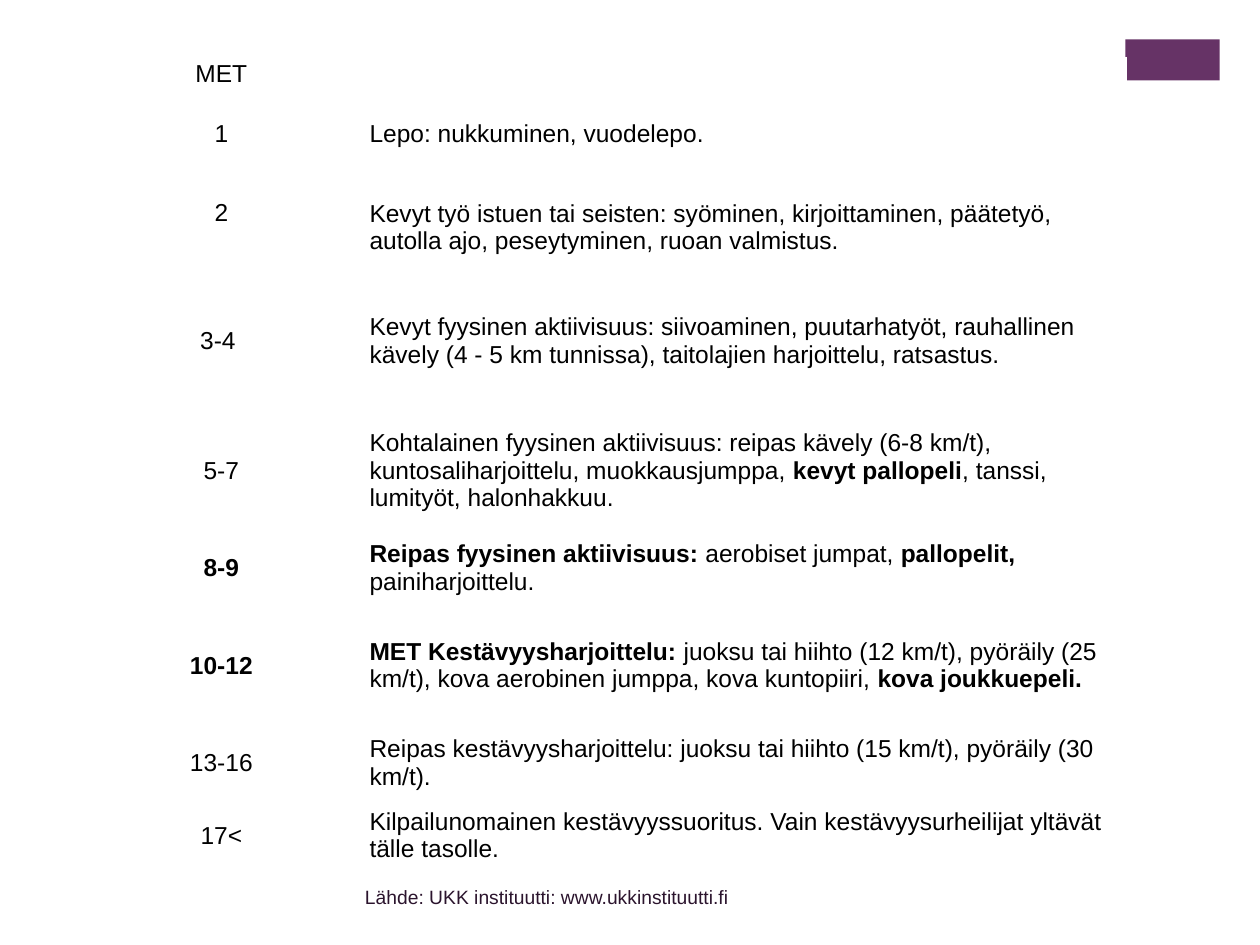
from lxml.etree import SubElement
from pptx import Presentation
from pptx.dml.color import RGBColor
from pptx.enum.shapes import MSO_SHAPE as Shape
from pptx.enum.text import MSO_ANCHOR as Anchor, PP_ALIGN as Align
from pptx.oxml.ns import qn
from pptx.util import Pt

COLORS = {"accent": "663366", "text": "000000", "source": "2B142D"}
BODY_SIZE = 14
INSET = 0.7
COLUMN_WIDTHS = [168, 433]
# Row height, MET level, description; ** switches bold on and off.
MET_ROWS = [
    (18, "MET", ""),
    (50.5, "1", "Lepo: nukkuminen, vuodelepo."),
    (56, "2", "Kevyt työ istuen tai seisten: syöminen, kirjoittaminen, päätetyö, "
              "autolla ajo, peseytyminen, ruoan valmistus."),
    (74, "3-4 ", "Kevyt fyysinen aktiivisuus: siivoaminen, puutarhatyöt, rauhallinen "
                 "kävely (4 - 5 km tunnissa), taitolajien harjoittelu, ratsastus."),
    (74, "5-7", "Kohtalainen fyysinen aktiivisuus: reipas kävely (6-8 km/t), "
                "kuntosaliharjoittelu, muokkausjumppa, **kevyt pallopeli**, tanssi, "
                "lumityöt, halonhakkuu."),
    (37.5, "**8-9**", "**Reipas fyysinen aktiivisuus: **aerobiset jumpat, "
                      "**pallopelit, **painiharjoittelu."),
    (74, "**10-12**", "**MET Kestävyysharjoittelu: **juoksu tai hiihto (12 km/t), "
                      "pyöräily (25 km/t), kova aerobinen jumppa, kova kuntopiiri, "
                      "**kova joukkuepeli.**"),
    (37.5, "13-16", "Reipas kestävyysharjoittelu: juoksu tai hiihto (15 km/t), "
                    "pyöräily (30 km/t)."),
    (45.5, "17<", "Kilpailunomainen kestävyyssuoritus. Vain kestävyysurheilijat "
                  "yltävät tälle tasolle."),
]
RAISED_LEVEL = "2"  # this label sits half a line above the middle of its row


def set_all(target, values):
    for name, value in values.items():
        setattr(target, name, value)


class SlideBuilder:
    def __init__(self, slide, font="Arial"):
        self.slide = slide
        self.font = font

    def fill_para(self, para, text, size, color):
        """Fill a paragraph, with ** marking where bold starts and ends."""
        for index, part in enumerate(text.split("**")):
            if part:
                span = para.add_run()
                span.text = part
                set_all(span.font, {"name": self.font, "size": Pt(size),
                                    "bold": index % 2 == 1})
                span.font.color.rgb = RGBColor.from_string(COLORS[color])
        if not text:
            # An empty cell would otherwise be as tall as 18 point text
            SubElement(para._p, qn("a:endParaRPr"), sz=str(size * 100))

    def block(self, left, top, width, height, color):
        shape = self.slide.shapes.add_shape(
            Shape.RECTANGLE, Pt(left), Pt(top), Pt(width), Pt(height))
        shape.shadow.inherit = False
        shape.fill.solid()
        shape.fill.fore_color.rgb = RGBColor.from_string(COLORS[color])
        shape.line.fill.background()

    def text(self, left, top, width, height, text, size, color):
        box = self.slide.shapes.add_textbox(Pt(left), Pt(top), Pt(width), Pt(height))
        box.text_frame.word_wrap = True
        self.fill_para(box.text_frame.paragraphs[0], text, size, color)

    def cell(self, cell, text, align):
        cell.fill.background()
        set_all(cell, {"vertical_anchor": Anchor.MIDDLE,
                       "margin_left": Pt(INSET), "margin_right": Pt(INSET),
                       "margin_top": Pt(INSET), "margin_bottom": Pt(INSET)})
        para = cell.text_frame.paragraphs[0]
        para.alignment = align
        self.fill_para(para, text, BODY_SIZE, "text")

    def table(self, left, top, widths, rows):
        height = sum(row[0] for row in rows)
        table = self.slide.shapes.add_table(
            len(rows), len(widths), Pt(left), Pt(top), Pt(sum(widths)), Pt(height)).table
        set_all(table, {"first_row": False, "horz_banding": False})
        for column, width in zip(table.columns, widths):
            column.width = Pt(width)
        for index, (row_height, level, description) in enumerate(rows):
            table.rows[index].height = Pt(row_height)
            self.cell(table.cell(index, 0), level, Align.CENTER)
            self.cell(table.cell(index, 1), description, Align.LEFT)
            if level == RAISED_LEVEL:
                table.cell(index, 0).margin_bottom = Pt(INSET + BODY_SIZE + 2)


def main():
    deck = Presentation()
    set_all(deck, {"slide_width": Pt(720), "slide_height": Pt(540)})
    page = SlideBuilder(deck.slides.add_slide(deck.slide_layouts[6]))
    page.block(643, 22.5, 54, 23.5, "accent")
    page.table(42.5, 33, COLUMN_WIDTHS, MET_ROWS)
    page.text(201.5, 502.5, 307, 29, "Lähde: UKK instituutti: www.ukkinstituutti.fi",
              11, "source")
    deck.save("out.pptx")


if __name__ == "__main__":
    main()
